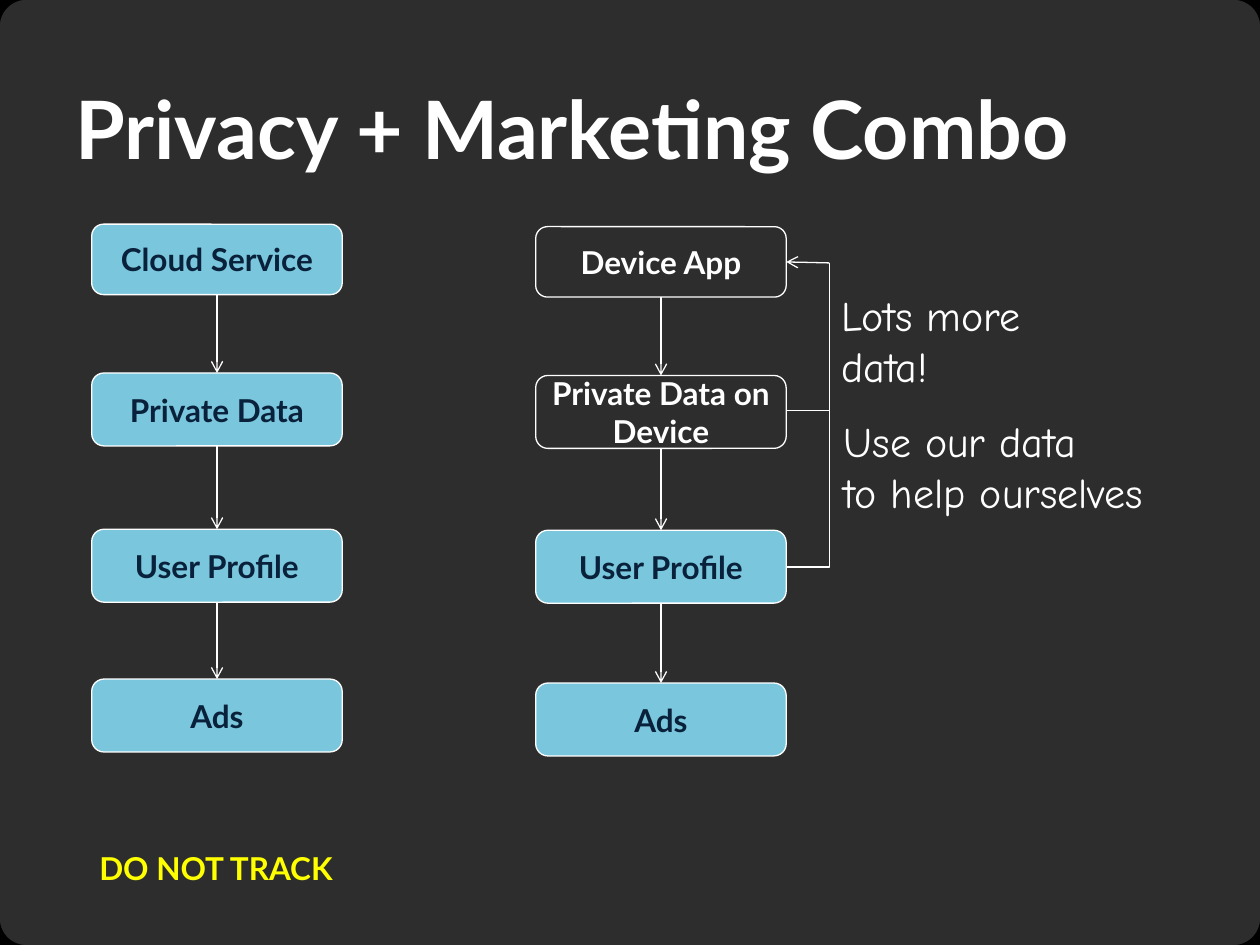
from math import cos, radians, sin

from lxml.etree import SubElement
from pptx import Presentation
from pptx.dml.color import RGBColor
from pptx.enum.shapes import MSO_CONNECTOR, MSO_SHAPE
from pptx.enum.text import MSO_ANCHOR, PP_ALIGN
from pptx.oxml.ns import qn
from pptx.util import Cm, Pt

WHITE = RGBColor(0xFF, 0xFF, 0xFF)
BLACK = RGBColor(0x00, 0x00, 0x00)
CHARCOAL = RGBColor(0x2D, 0x2D, 0x2D)
SKY = RGBColor(0x7A, 0xC6, 0xDC)
NAVY = RGBColor(0x09, 0x21, 0x3B)
YELLOW = RGBColor(0xFF, 0xFF, 0x00)

# Content; lengths in cm
SLIDE_W, SLIDE_H = 25.4, 19.05
TITLE = ("Privacy + Marketing Combo", (1.27, 1.47, 23.29, 2.84))
WARNING = ("DO NOT TRACK", (1.47, 16.76, 5.77, 1.47))
STEP_W, FIRST_H, STEP_H = 5.05, 1.42, 1.47
# Each flow: left edge, then (label, top, stays on the device)
FLOWS = [
    (1.85, [("Cloud Service", 4.52, False), ("Private Data", 7.52, False),
            ("User Profile", 10.67, False), ("Ads", 13.69, False)]),
    (10.8, [("Device App", 4.57, True), ("Private Data on Device", 7.57, True),
            ("User Profile", 10.69, False), ("Ads", 13.77, False)]),
]
NOTES = [
    ("Lots more \vdata!", (16.71, 5.72, 5.38, 2.31)),
    ("Use our data\nto help ourselves", (16.76, 8.26, 8.64, 2.31)),
]
FEEDBACK_X = 16.72
FEEDBACK = [(8.28, 5.3), (11.43, 8.26)]  # start and end heights
CORNER_R, CORNER_INSET = 0.71, 0.53

TITLE_FONT = {"name": "Lato", "size": Pt(46), "bold": True}
STEP_FONT = {"name": "Lato", "size": Pt(18), "bold": True}
NOTE_FONT = {"name": "Comic Neue", "size": Pt(24), "bold": False}

prs = Presentation()
prs.slide_width, prs.slide_height = Cm(SLIDE_W), Cm(SLIDE_H)
slide = prs.slides.add_slide(prs.slide_layouts[6])
slide.background.fill.solid()
slide.background.fill.fore_color.rgb = CHARCOAL
shapes = slide.shapes


def write(shape, text, font, color, align=PP_ALIGN.LEFT, anchor=MSO_ANCHOR.TOP):
    frame = shape.text_frame
    frame.word_wrap = True
    frame.vertical_anchor = anchor
    frame.text = text
    for paragraph in frame.paragraphs:
        paragraph.alignment = align
        for run in paragraph.runs:
            for key, value in font.items():
                setattr(run.font, key, value)
            run.font.color.rgb = color


def add_text(text, box, font):
    write(shapes.add_textbox(*map(Cm, box)), text, font, WHITE)


def add_step(text, box, color, fill=None, outline=WHITE):
    step = shapes.add_shape(MSO_SHAPE.ROUNDED_RECTANGLE, *map(Cm, box))
    step.shadow.inherit = False
    for part, paint in ((step.fill, fill), (step.line.fill, outline)):
        if paint is None:
            part.background()
        else:
            part.solid()
            part.fore_color.rgb = paint
    step.line.width = Pt(0.75)
    write(step, text, STEP_FONT, color, PP_ALIGN.CENTER, MSO_ANCHOR.MIDDLE)
    return step


def add_line(kind, start=(0, 0), end=(0, 0), arrow=False):
    line = shapes.add_connector(kind, *map(Cm, (*start, *end)))
    line.line.color.rgb = WHITE
    line.line.width = Pt(0.75)
    properties = line._element.spPr
    if arrow:
        SubElement(properties.find(qn("a:ln")), qn("a:tailEnd"), type="arrow")
    SubElement(properties, qn("a:effectLst"))
    return line


# Rounded black slide corners, one quarter arc each
for right, bottom, first_angle in ((1, 0, 270), (0, 0, 180), (0, 1, 90), (1, 1, 0)):
    center_x = SLIDE_W - CORNER_INSET if right else CORNER_INSET
    center_y = SLIDE_H - CORNER_INSET if bottom else CORNER_INSET
    angles = [radians(first_angle + step) for step in range(0, 91, 6)]
    points = [(Cm(center_x + CORNER_R * cos(a)), Cm(center_y + CORNER_R * sin(a)))
              for a in angles]
    builder = shapes.build_freeform(*points[0])
    builder.add_line_segments(points[1:], close=False)
    corner = builder.convert_to_shape()
    corner.shadow.inherit = False
    corner.fill.background()
    corner.line.color.rgb = BLACK
    corner.line.width = Pt(10)

add_text(*TITLE, TITLE_FONT)

# Flows of steps, joined by arrows
for left, steps in FLOWS:
    flow = []
    for index, (label, top, on_device) in enumerate(steps):
        height = STEP_H if index else FIRST_H
        flow.append(add_step(label, (left, top, STEP_W, height),
                             WHITE if on_device else NAVY,
                             None if on_device else SKY))
    for upper, lower in zip(flow, flow[1:]):
        arrow = add_line(MSO_CONNECTOR.STRAIGHT, arrow=True)
        arrow.begin_connect(upper, 2)
        arrow.end_connect(lower, 0)
device_app = flow[0]
device_right = left + STEP_W

add_step(*WARNING, YELLOW, outline=None)
for note, box in NOTES:
    add_text(note, box, NOTE_FONT)

# Feedback from the device data and the profile to the app
for start_y, end_y in FEEDBACK:
    bracket = add_line(MSO_CONNECTOR.ELBOW, (device_right, start_y), (FEEDBACK_X, end_y))
    guides = bracket._element.spPr.find(qn("a:prstGeom")).get_or_add_avLst()
    SubElement(guides, qn("a:gd"), name="adj1", fmla="val 100000")
feedback_arrow = add_line(MSO_CONNECTOR.STRAIGHT, (FEEDBACK_X, 5.3), (device_right, 5.28), True)
feedback_arrow.end_connect(device_app, 3)

prs.save("out.pptx")
